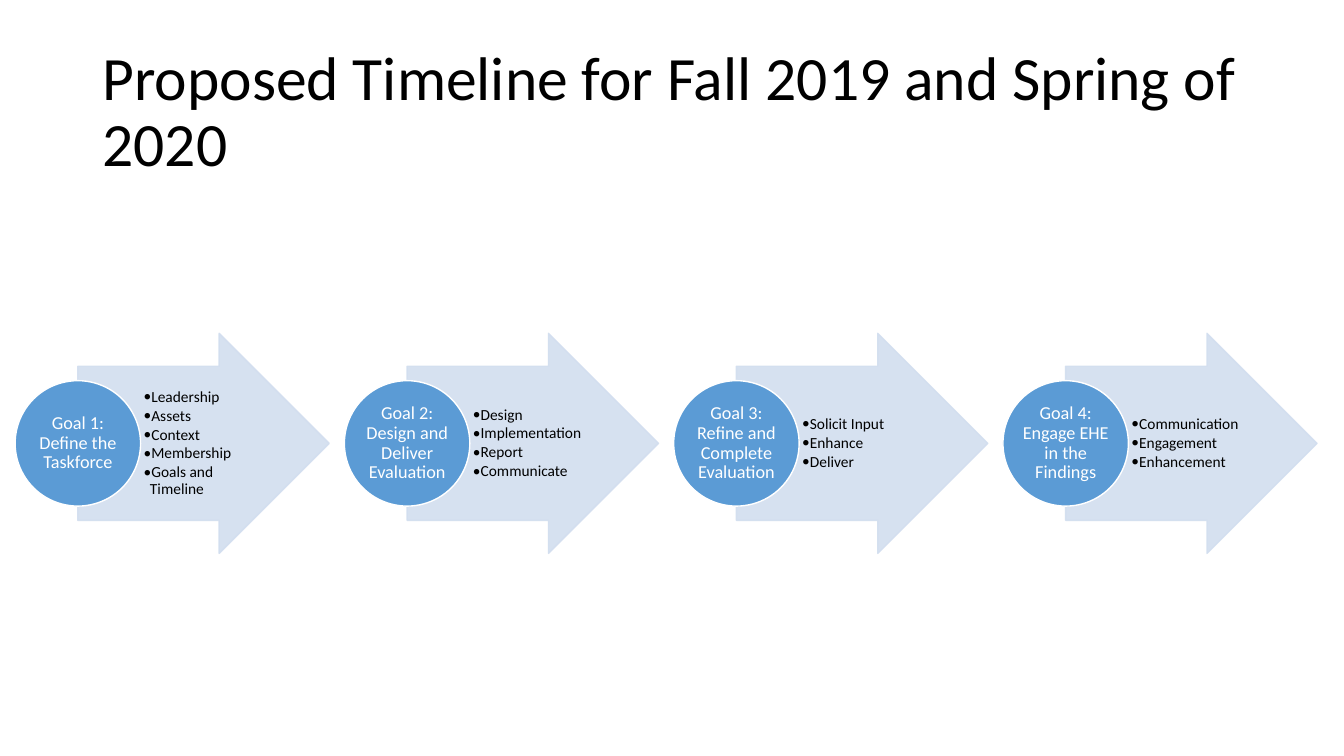
from dataclasses import dataclass

from lxml.etree import SubElement
from pptx import Presentation
from pptx.dml.color import RGBColor as Rgb
from pptx.dml.fill import FillFormat
from pptx.enum.shapes import MSO_SHAPE as Preset
from pptx.enum.text import MSO_ANCHOR as Anchor, MSO_AUTO_SIZE as AutoSize, PP_ALIGN as Align
from pptx.oxml.ns import qn
from pptx.shapes.autoshape import Shape
from pptx.slide import Slide
from pptx.text.text import TextFrame, _Paragraph as Paragraph
from pptx.util import Pt

COLOURS = {"ink": "000000", "white": "FFFFFF", "arrow": "D2DEEF", "circle": "5B9BD5"}
FONT = "Calibri"
FIRST_CENTRE, GOAL_STEP, MIDDLE = 55.6, 235.2, 316.7
ARROW_WIDTH, ARROW_HEIGHT = 179.6, 157.2
CIRCLE_SIZE = 89.6
LIST_OFFSET, LIST_WIDTH, LIST_HEIGHT = 45, 87.4, 109.4
LIST_SIZE, BULLET_INDENT = 11, 4.5


@dataclass(frozen=True)
class Goal:
    """One goal with the steps listed on its arrow."""

    label: str
    steps: tuple[str, ...]


GOALS = (
    Goal("Goal 1: Define the Taskforce",
         ("Leadership", "Assets", "Context", "Membership", "Goals and Timeline")),
    Goal("Goal 2: Design and Deliver Evaluation",
         ("Design", "Implementation", "Report", "Communicate")),
    Goal("Goal 3: Refine and Complete Evaluation",
         ("Solicit Input", "Enhance", "Deliver")),
    Goal("Goal 4: Engage EHE in the Findings",
         ("Communication", "Engagement", "Enhancement")),
)


def paint(fill: FillFormat, colour: str, opacity: int = 100) -> None:
    """Give a fill a solid colour with an opacity in percent."""
    fill.solid()
    fill.fore_color.rgb = Rgb.from_string(COLOURS[colour])
    if opacity < 100:
        tint = fill._xPr.find(qn("a:solidFill"))[0]
        SubElement(tint, qn("a:alpha"), val=str(opacity * 1000))


def set_frame(frame: TextFrame, left: float, right: float, edge: float) -> None:
    """Set wrapping, middle anchoring and insets."""
    frame.word_wrap = True
    frame.auto_size = AutoSize.NONE
    frame.vertical_anchor = Anchor.MIDDLE
    frame.margin_left, frame.margin_right = Pt(left), Pt(right)
    frame.margin_top = frame.margin_bottom = Pt(edge)


def style_para(para: Paragraph, size: float, colour: str, align: Align = Align.LEFT) -> None:
    """Set a paragraph's font, alignment and line spacing."""
    para.alignment = align
    para.line_spacing = 0.9
    para.font.name = FONT
    para.font.size = Pt(size)
    para.font.color.rgb = Rgb.from_string(COLOURS[colour])


def add_bullet(para: Paragraph) -> None:
    """Give a paragraph a hanging bullet in the size and font of its text."""
    properties = para._p.get_or_add_pPr()
    properties.set("marL", str(Pt(BULLET_INDENT)))
    properties.set("indent", str(-Pt(BULLET_INDENT)))
    SubElement(properties, qn("a:buFont"), typeface=FONT)
    SubElement(properties, qn("a:buChar"), char="•")
    ending = SubElement(para._p, qn("a:endParaRPr"), sz=str(LIST_SIZE * 100))
    SubElement(ending, qn("a:latin"), typeface=FONT)


def add_preset(page: Slide, preset: Preset, left: float, width: float, height: float,
               fill: str, line: str, opacity: int = 100) -> Shape:
    """Draw a preset shape centred on the middle line."""
    shape = page.shapes.add_shape(
        preset, Pt(left), Pt(MIDDLE - height / 2), Pt(width), Pt(height))
    shape.shadow.inherit = False
    paint(shape.fill, fill, opacity)
    paint(shape.line.fill, line, opacity)
    shape.line.width = Pt(1)
    return shape


def add_steps(page: Slide, steps: tuple[str, ...], left: float) -> None:
    """Write the bulleted steps of a goal."""
    box = page.shapes.add_textbox(
        Pt(left), Pt(MIDDLE - LIST_HEIGHT / 2), Pt(LIST_WIDTH), Pt(LIST_HEIGHT))
    frame = box.text_frame
    set_frame(frame, 2, 1.4, 0.7)
    frame.text = "\n".join(steps)
    for para in frame.paragraphs:
        para.level = 1
        para.space_after = Pt(1.6)
        para.line_spacing = 0.9
        add_bullet(para)
        style_para(para, LIST_SIZE, "ink")


def add_goal(page: Slide, goal: Goal, centre: float) -> None:
    """Draw a goal's arrow, steps and circle."""
    arrow = add_preset(page, Preset.RIGHT_ARROW, centre, ARROW_WIDTH, ARROW_HEIGHT,
                       "arrow", "arrow", 90)
    arrow.adjustments[0], arrow.adjustments[1] = 0.7, 0.5
    add_steps(page, goal.steps, centre + LIST_OFFSET)
    circle = add_preset(page, Preset.OVAL, centre - CIRCLE_SIZE / 2, CIRCLE_SIZE,
                        CIRCLE_SIZE, "circle", "white")
    set_frame(circle.text_frame, 0.7, 0.7, 0.7)
    circle.text_frame.text = goal.label
    style_para(circle.text_frame.paragraphs[0], 13, "white", Align.CENTER)


def add_title(page: Slide, text: str) -> None:
    """Place and format the slide title."""
    title = page.shapes.title
    title.left, title.top, title.width, title.height = Pt(66), Pt(28.8), Pt(828), Pt(104.4)
    set_frame(title.text_frame, 7.2, 7.2, 3.6)
    title.text_frame.text = text
    style_para(title.text_frame.paragraphs[0], 44, "ink")


def main() -> None:
    """Build and save the timeline slide."""
    deck = Presentation()
    deck.slide_width, deck.slide_height = Pt(960), Pt(540)
    page = deck.slides.add_slide(deck.slide_layouts.get_by_name("Title Only"))
    add_title(page, "Proposed Timeline for Fall 2019 and Spring of 2020")
    for index, goal in enumerate(GOALS):
        add_goal(page, goal, FIRST_CENTRE + index * GOAL_STEP)
    deck.save("out.pptx")


if __name__ == "__main__":
    main()
